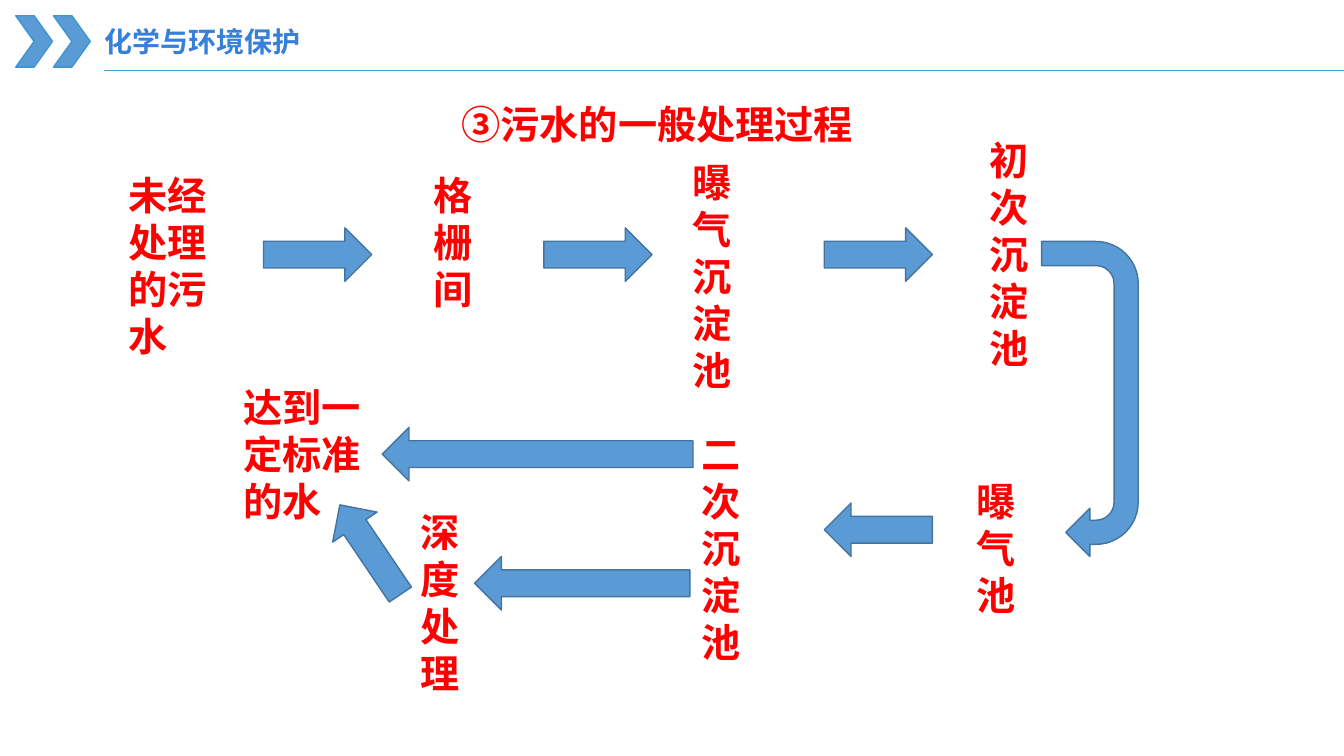
from pptx import Presentation
from pptx.dml.color import RGBColor
from pptx.enum.shapes import MSO_CONNECTOR, MSO_SHAPE
from pptx.enum.text import MSO_ANCHOR, MSO_AUTO_SIZE, PP_ALIGN
from pptx.oxml.ns import qn
from pptx.util import Pt
from lxml import etree

PX = 9525
PAGE_WIDTH, PAGE_HEIGHT = 1280, 720
CHEVRON = MSO_SHAPE.CHEVRON
ARROW = MSO_SHAPE.RIGHT_ARROW
U_TURN = MSO_SHAPE.U_TURN_ARROW
STRAIGHT = MSO_CONNECTOR.STRAIGHT
TOP, LEFT, NO_FIT = MSO_ANCHOR.TOP, PP_ALIGN.LEFT, MSO_AUTO_SIZE.NONE

CJK_FONT, LATIN_FONT = "Noto Sans CJK SC", "Calibri"
COLORS = {
    "header": "3780D7", "chevron_edge": "3B96D3", "rule": "3DA1D2",
    "fill": "5B9BD5", "arrow_edge": "43739E", "label": "FF0000",
}

ARROW_WIDTH, ARROW_HEIGHT = 103, 51
STATIONS = [
    ("未经处理的污水", (113, 158, 95, 190)),
    ("格栅间", (403, 158, 47, 145)),
    ("曝气沉淀池", (650, 146, 52, 236)),
    ("初次沉淀池", (933, 125, 59, 236)),
    ("曝气池", (921, 450, 58, 145)),
    ("二次沉淀池", (659, 405, 52, 236)),
    ("深度处理", (391, 479, 60, 190)),
    ("达到一定标准的水", (222, 360, 142, 145)),
]
FORWARD_ARROWS = [(251 + 267 * step, 217, ARROW_WIDTH, 0) for step in range(3)]
RETURN_ARROWS = [
    (785, 479, ARROW_WIDTH, 180),
    (364, 407, 296, 180),
    (452, 530, 205, 180),
    (301, 498, ARROW_WIDTH, 236),
]


def px(*lengths):
    return [length * PX for length in lengths]


def color(name):
    return RGBColor.from_string(COLORS[name])


def add_span(para, text, size, color_name, font=CJK_FONT):
    span = para.add_run()
    span.text = text
    span.font.size = Pt(size)
    span.font.bold = True
    span.font.color.rgb = color(color_name)
    span.font.name = font
    # East Asian glyphs take their typeface from a:ea
    latin = span.font._element.find(qn("a:latin"))
    east_asian = etree.Element(qn("a:ea"), typeface=CJK_FONT)
    latin.addnext(east_asian)


def prepare_frame(box):
    """Set a top-left text frame and return its first paragraph."""
    frame = box.text_frame
    frame.word_wrap = True
    frame.auto_size = NO_FIT
    frame.vertical_anchor = TOP
    para = frame.paragraphs[0]
    para.alignment = LEFT
    return para


def add_label(page, text, bounds, size=28, color_name="label"):
    box = page.shapes.add_textbox(*px(*bounds))
    add_span(prepare_frame(box), text, size, color_name)


def add_block(page, kind, bounds, edge="arrow_edge", rotation=0):
    block = page.shapes.add_shape(kind, *px(*bounds))
    block.shadow.inherit = False
    block.rotation = rotation
    block.fill.solid()
    block.fill.fore_color.rgb = color("fill")
    block.line.color.rgb = color(edge)
    block.line.width = Pt(1)


def add_header(page, left, top, width, height):
    for index in range(2):
        add_block(page, CHEVRON, (left + 36 * index, top, 35, height), "chevron_edge")
    add_label(page, "化学与环境保护", (left + 75, top + 4, 351, 42), 20, "header")
    rule_y = top + height + 3
    rule = page.shapes.add_connector(
        STRAIGHT, *px(left + 84, rule_y, left + width, rule_y))
    rule.line.color.rgb = color("rule")
    rule.line.width = Pt(0.5)
    etree.SubElement(rule._element.spPr, qn("a:effectLst"))


def fill_title(page, bounds):
    title = page.shapes.title
    title.left, title.top, title.width, title.height = px(*bounds)
    para = prepare_frame(title)
    add_span(para, "③", 28, "label", LATIN_FONT)
    add_span(para, "污水的一般处理过程", 28, "label")


def add_process(page, left, top):
    """Place the treatment stations and the arrows that join them."""
    for text, (x, y, width, height) in STATIONS:
        add_label(page, text, (left + x, top + y, width, height))
    for x, y, width, rotation in FORWARD_ARROWS + RETURN_ARROWS:
        add_block(page, ARROW, (left + x, top + y, width, ARROW_HEIGHT),
                  rotation=rotation)
    add_block(page, U_TURN, (left + 888, top + 334, 300, 92), rotation=90)


def main():
    deck = Presentation()
    deck.slide_width, deck.slide_height = px(PAGE_WIDTH, PAGE_HEIGHT)
    page = deck.slides.add_slide(deck.slide_layouts.get_by_name("Title Only"))
    add_header(page, 15, 15, PAGE_WIDTH - 15, 49)
    fill_title(page, (430, 91, 420, 55))
    add_process(page, 0, 0)
    deck.save("out.pptx")


if __name__ == "__main__":
    main()
